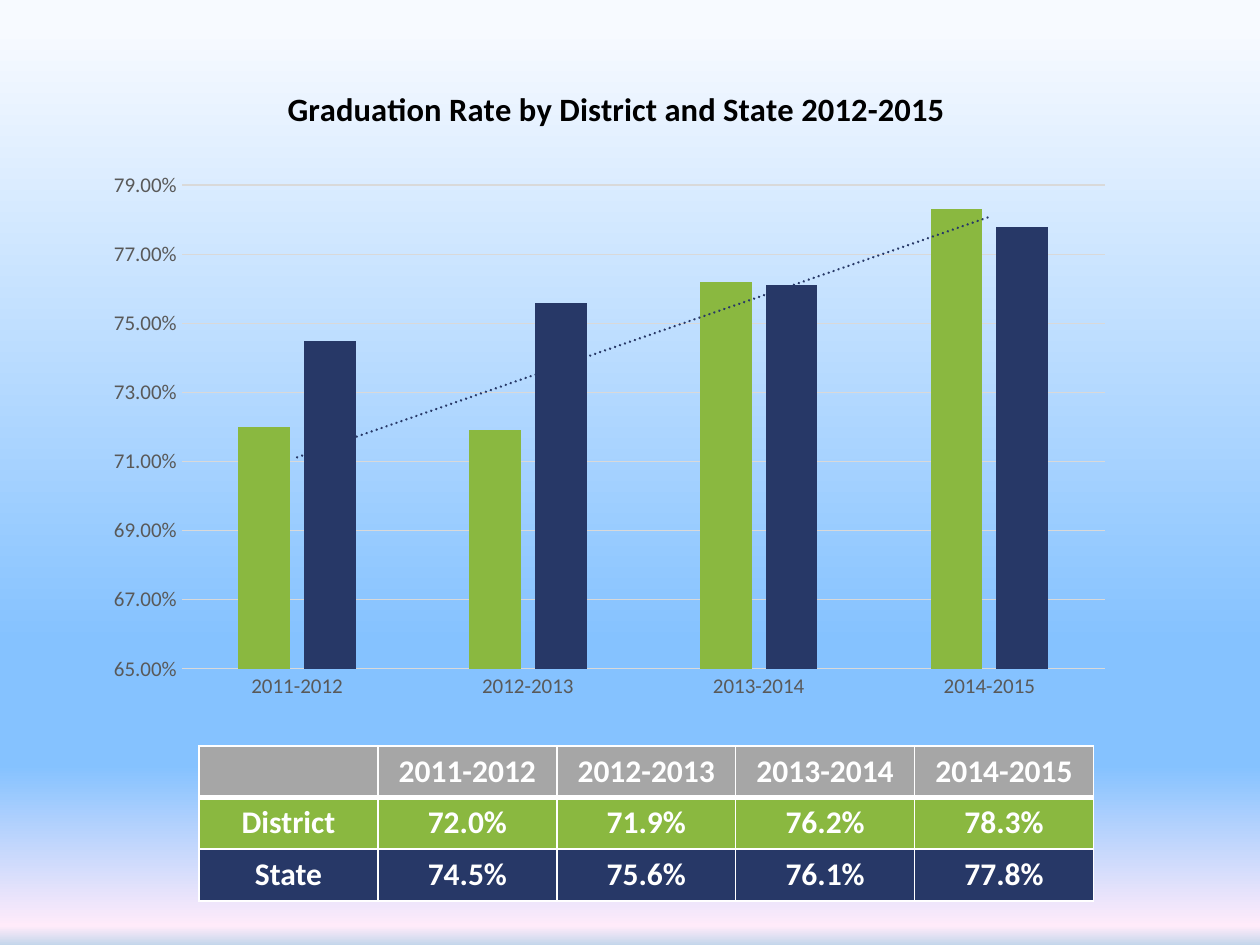
import dataclasses

import lxml.etree
import pptx
import pptx.chart.data
import pptx.dml.color
import pptx.enum.chart
import pptx.enum.text
import pptx.oxml
import pptx.oxml.ns
import pptx.util

Inches = pptx.util.Inches
qn = pptx.oxml.ns.qn


@dataclasses.dataclass(frozen=True)
class Theme:
    font: str = "Calibri"
    district: str = "8AB840"
    state: str = "273867"
    header: str = "A6A6A6"
    white: str = "FFFFFF"
    title: str = "000000"
    axis: str = "595959"
    grid: str = "D9D9D9"
    title_size: float = 18.6
    axis_size: float = 12
    table_size: float = 18
    background: tuple = ((3, "F7FAFF"), (68, "85C2FF"), (81, "85C2FF"), (98, "FFEBFA"), (100, "C4D6EB"))


def style_font(font, size, color, bold):
    font.name = theme.font
    font.size = pptx.util.Pt(size)
    font.bold = bold
    font.color.rgb = pptx.dml.color.RGBColor.from_string(color)


def add_layout(parent, position, **values):
    layout = lxml.etree.Element(qn("c:layout"))
    manual = lxml.etree.SubElement(layout, qn("c:manualLayout"))
    for name, value in values.items():
        lxml.etree.SubElement(manual, qn(f"c:{name}")).set("val", str(value))
    for existing in parent.findall(qn("c:layout")):
        parent.remove(existing)
    parent.insert(position, layout)


theme = Theme()
years = ["2011-2012", "2012-2013", "2013-2014", "2014-2015"]
rates = {"District": (0.72, 0.719, 0.762, 0.783), "State": (0.745, 0.756, 0.761, 0.778)}
colors = (theme.district, theme.state)

presentation = pptx.Presentation()
presentation.slide_width = Inches(10)
presentation.slide_height = Inches(7.5)
slide = presentation.slides.add_slide(presentation.slide_layouts[6])

background = slide.background.fill
background.gradient()
background.gradient_angle = 270
stops = slide.element.find(".//" + qn("a:gsLst"))
for stop in list(stops):
    stops.remove(stop)
for percent, color in theme.background:
    stop = lxml.etree.SubElement(stops, qn("a:gs"), pos=str(percent * 1000))
    lxml.etree.SubElement(stop, qn("a:srgbClr"), val=color)

chart_data = pptx.chart.data.CategoryChartData(number_format="0.0%")
chart_data.categories = years
for number, values in enumerate(rates.values(), 1):
    chart_data.add_series(f"Series {number}", values)
chart = slide.shapes.add_chart(
    pptx.enum.chart.XL_CHART_TYPE.COLUMN_CLUSTERED,
    Inches(0.75), Inches(0.42), Inches(8.25), Inches(5.42), chart_data,
).chart
chart.has_legend = False
style_font(chart.font, theme.axis_size, theme.axis, False)

chart.has_title = True
title = chart.chart_title
title.include_in_layout = False
title.text_frame.text = "Graduation Rate by District and State 2012-2015"
style_font(title.text_frame.paragraphs[0].runs[0].font, theme.title_size, theme.title, True)
add_layout(title._element, 1, xMode="edge", yMode="edge", x=0.18, y=0.04)

plot = chart.plots[0]
plot.gap_width = 219
plot.overlap = -27
plot.vary_by_categories = False
add_layout(
    chart.element.find(".//" + qn("c:plotArea")), 0,
    layoutTarget="inner", xMode="edge", yMode="edge", x=0.084, y=0.143, w=0.888, h=0.759,
)

value_axis = chart.value_axis
value_axis.minimum_scale = 0.65
value_axis.maximum_scale = 0.8
value_axis.major_unit = 0.02
value_axis.tick_labels.number_format = "0.00%"
value_axis.tick_labels.number_format_is_linked = False
value_axis.has_major_gridlines = True
for line in (value_axis.major_gridlines.format.line, chart.category_axis.format.line):
    line.color.rgb = pptx.dml.color.RGBColor.from_string(theme.grid)
    line.width = pptx.util.Pt(0.75)
value_axis.format.line.fill.background()
for axis in (value_axis, chart.category_axis):
    axis.major_tick_mark = pptx.enum.chart.XL_TICK_MARK.NONE
    axis.minor_tick_mark = pptx.enum.chart.XL_TICK_MARK.NONE
    style_font(axis.tick_labels.font, theme.axis_size, theme.axis, False)

for series, color in zip(plot.series, colors):
    series.invert_if_negative = False
    series.format.fill.solid()
    series.format.fill.fore_color.rgb = pptx.dml.color.RGBColor.from_string(color)

trendline = pptx.oxml.parse_xml(
    f'<c:trendline {pptx.oxml.ns.nsdecls("c", "a")}><c:spPr><a:ln w="19050" cap="rnd">'
    f'<a:solidFill><a:srgbClr val="{theme.state}"/></a:solidFill><a:prstDash val="sysDot"/></a:ln></c:spPr>'
    '<c:trendlineType val="linear"/><c:dispRSqr val="0"/><c:dispEq val="0"/></c:trendline>'
)
plot.series[0]._element.find(qn("c:cat")).addprevious(trendline)

rows = [["", *years]]
rows += [[name, *(f"{value:.1%}" for value in values)] for name, values in rates.items()]
table = slide.shapes.add_table(
    len(rows), len(rows[0]), Inches(1.58), Inches(5.92), Inches(7.08), Inches(1.22)
).table
for column in table.columns:
    column.width = Inches(1.42)

for row_index, (texts, color) in enumerate(zip(rows, (theme.header, *colors))):
    table.rows[row_index].height = Inches(0.41)
    widths = {"lnL": 1, "lnR": 1, "lnT": 3 if row_index == 1 else 1, "lnB": 3 if row_index == 0 else 1}
    for column_index, text in enumerate(texts):
        cell = table.cell(row_index, column_index)
        properties = cell._tc.get_or_add_tcPr()
        for side, width in widths.items():
            border = lxml.etree.SubElement(properties, qn(f"a:{side}"), w=str(pptx.util.Pt(width)))
            border_fill = lxml.etree.SubElement(border, qn("a:solidFill"))
            lxml.etree.SubElement(border_fill, qn("a:srgbClr"), val=theme.white)
        cell.fill.solid()
        cell.fill.fore_color.rgb = pptx.dml.color.RGBColor.from_string(color)
        paragraph = cell.text_frame.paragraphs[0]
        paragraph.text = text
        paragraph.alignment = pptx.enum.text.PP_ALIGN.CENTER
        style_font(paragraph.font, theme.table_size, theme.white, True)
        for run in paragraph.runs:
            style_font(run.font, theme.table_size, theme.white, True)

presentation.save("out.pptx")
